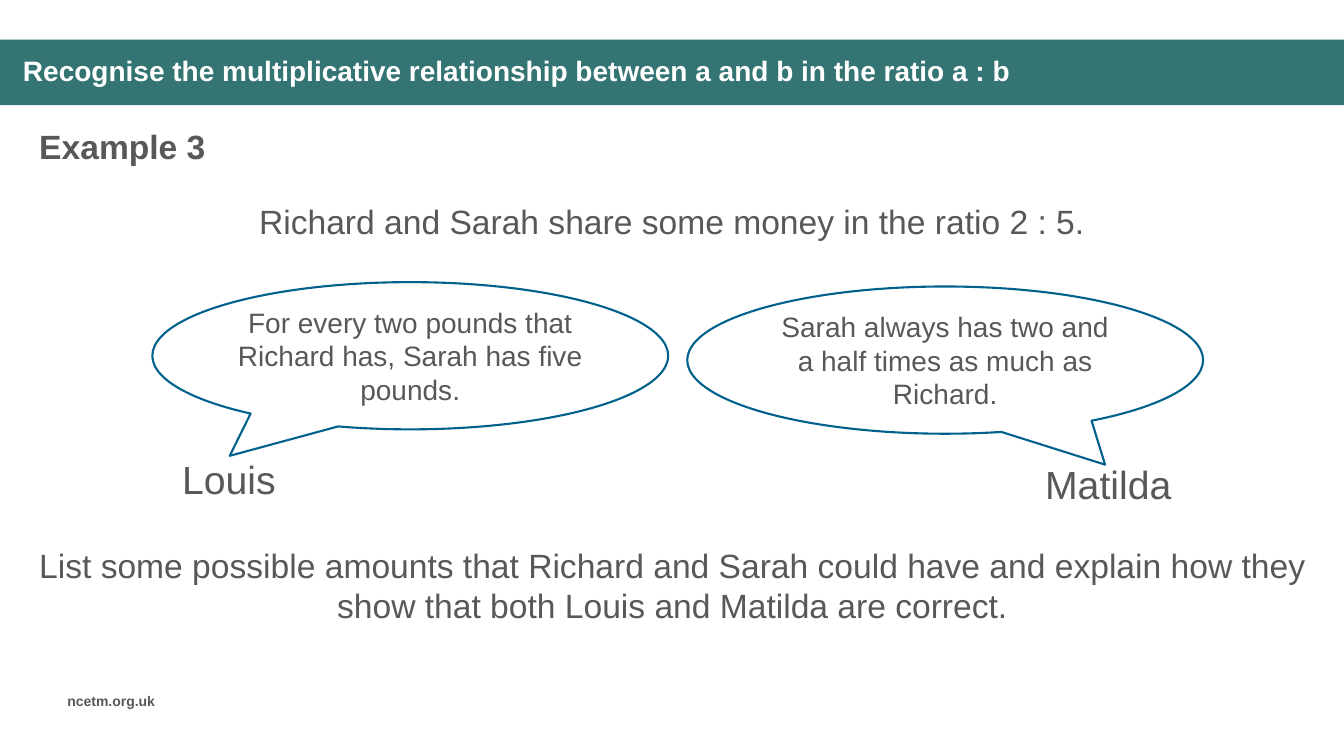
from pptx import Presentation
from pptx.dml.color import RGBColor
from pptx.enum.shapes import MSO_SHAPE
from pptx.enum.text import MSO_ANCHOR, PP_ALIGN
from pptx.util import Cm, Pt

COLOURS = {"band": "347574", "text": "585858", "title": "FFFFFF", "outline": "00628C"}
FONT = "Arial"
SLIDE_SIZE = (33.87, 19.05)
BAND = (0, 1, 33.87, 1.65)

# Text, box (left, top, width, height in cm), format
TEXTS = [
    ("ncetm.org.uk", (1.45, 17.32, 3.07, 0.69), {"size": 10, "bold": True}),
    ("Recognise the multiplicative relationship between a and b in the ratio a : b",
     (0.33, 1.24, 29.41, 1.19),
     {"size": 20, "bold": True, "colour": "title", "anchor": MSO_ANCHOR.MIDDLE,
      "line_spacing": 0.9}),
    ("Example 3", (0.74, 3.05, 16.92, 1.27), {"bold": True}),
    ("Richard and Sarah share some money in the ratio 2 : 5.",
     (3.33, 4.95, 27.2, 1.27), {"align": PP_ALIGN.CENTER}),
    ("List some possible amounts that Richard and Sarah could have and explain how "
     "they show that both Louis and Matilda are correct.",
     (0.74, 13.61, 32.41, 2.31), {"align": PP_ALIGN.CENTER}),
    ("Louis", (4.34, 11.36, 2.9, 1.45), {"size": 28, "wrap": False}),
    ("Matilda", (26.09, 11.47, 3.73, 1.45), {"size": 28, "wrap": False}),
]

# Speech, left and top in cm, pointer position relative to the bubble
BUBBLE_SIZE = (13, 3.71)
BUBBLES = [
    ("For every two pounds that Richard has, Sarah has five pounds.",
     (3.84, 7.11), (-0.35, 0.68)),
    ("Sarah always has two and a half times as much as Richard.",
     (17.32, 7.22), (0.31, 0.71)),
]


def colour_of(name):
    return RGBColor.from_string(COLOURS[name])


def write_text(shape, text, size=24, bold=False, colour="text", align=PP_ALIGN.LEFT,
               anchor=MSO_ANCHOR.TOP, line_spacing=1.0, wrap=True):
    frame = shape.text_frame
    frame.word_wrap = wrap
    frame.vertical_anchor = anchor
    paragraph = frame.paragraphs[0]
    paragraph.alignment = align
    paragraph.line_spacing = line_spacing
    run = paragraph.add_run()
    run.text = text
    run.font.name = FONT
    run.font.size = Pt(size)
    run.font.bold = bold
    run.font.color.rgb = colour_of(colour)


def add_plain_shape(slide, kind, box):
    shape = slide.shapes.add_shape(kind, *map(Cm, box))
    shape.shadow.inherit = False
    return shape


def add_band(slide):
    band = add_plain_shape(slide, MSO_SHAPE.RECTANGLE, BAND)
    band.fill.solid()
    band.fill.fore_color.rgb = colour_of("band")
    band.line.fill.background()


def add_bubble(slide, speech, corner, pointer):
    bubble = add_plain_shape(slide, MSO_SHAPE.OVAL_CALLOUT, corner + BUBBLE_SIZE)
    for index, offset in enumerate(pointer):
        bubble.adjustments[index] = offset
    bubble.fill.background()
    bubble.line.color.rgb = colour_of("outline")
    bubble.line.width = Pt(1.5)
    write_text(bubble, speech, size=20, align=PP_ALIGN.CENTER, anchor=MSO_ANCHOR.MIDDLE)


def main():
    presentation = Presentation()
    presentation.slide_width, presentation.slide_height = map(Cm, SLIDE_SIZE)
    slide = presentation.slides.add_slide(presentation.slide_layouts[6])
    add_band(slide)
    for text, box, text_format in TEXTS:
        write_text(slide.shapes.add_textbox(*map(Cm, box)), text, **text_format)
    for speech, corner, pointer in BUBBLES:
        add_bubble(slide, speech, corner, pointer)
    presentation.save("out.pptx")


if __name__ == "__main__":
    main()
